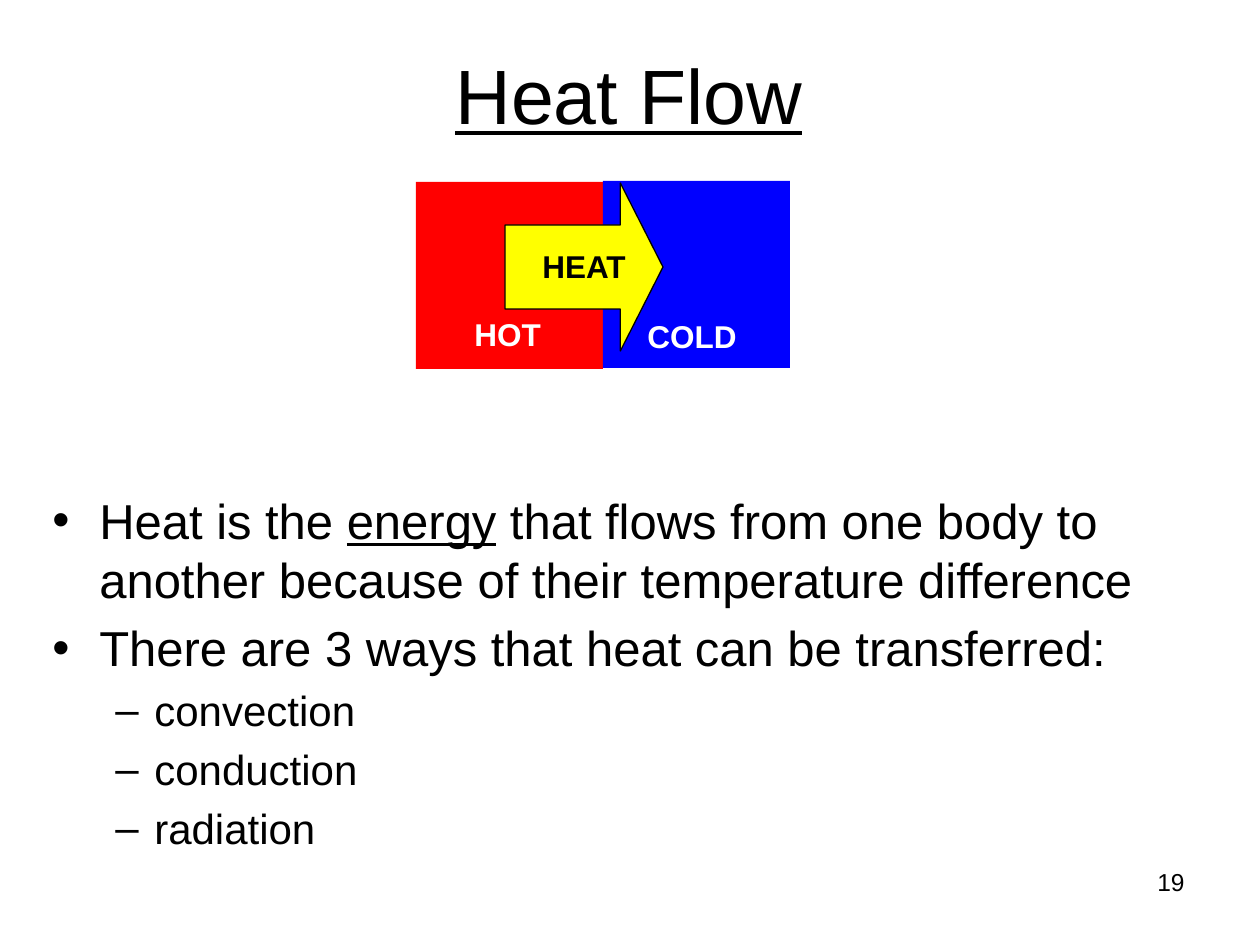
from dataclasses import dataclass

from lxml import etree
from pptx import Presentation
from pptx.dml.color import RGBColor
from pptx.enum.shapes import MSO_SHAPE
from pptx.enum.text import MSO_ANCHOR, PP_ALIGN
from pptx.oxml.ns import qn
from pptx.util import Pt

RECT, ARROW = MSO_SHAPE.RECTANGLE, MSO_SHAPE.RIGHT_ARROW
TOP, MIDDLE = MSO_ANCHOR.TOP, MSO_ANCHOR.MIDDLE
LEFT, CENTER, RIGHT = PP_ALIGN.LEFT, PP_ALIGN.CENTER, PP_ALIGN.RIGHT
COLORS = {"black": "000000", "white": "FFFFFF", "hot": "FF0000",
          "cold": "0000FF", "heat": "FFFF00"}
PX = 914400 / 126


@dataclass
class Box:
    x: int
    y: int
    w: int
    h: int


@dataclass
class Block:
    box: Box
    kind: int
    fill: str
    label: str
    label_box: Box
    text_color: str


@dataclass
class Label:
    box: Box
    text: str
    style: dict
    align: int = LEFT
    anchor: int = TOP
    wrap: bool = True


@dataclass
class Level:
    size: int
    margin: int
    hanging: int
    bullet: str


@dataclass
class Item:
    level: Level
    runs: list[tuple[str, bool]]


MAIN = Level(28, 47, 47, "•")
SUB = Level(24, 102, 39, "–")
ITEMS = [
    Item(MAIN, [("Heat is the ", False), ("energy", True),
                (" that flows from one body to another because of their "
                 "temperature difference", False)]),
    Item(MAIN, [("There are 3 ways that heat can be transferred:", False)]),
    *(Item(SUB, [(way, False)]) for way in ("convection", "conduction", "radiation")),
]
BLOCKS = [
    Block(Box(416, 182, 187, 187), RECT, "hot", "HOT", Box(462, 309, 92, 50), "white"),
    Block(Box(603, 181, 187, 187), RECT, "cold", "COLD", Box(635, 311, 115, 50), "white"),
    Block(Box(505, 183, 158, 168), ARROW, "heat", "HEAT", Box(530, 241, 111, 50), "black"),
]
TITLE = Label(Box(62, 15, 1134, 158), "Heat Flow",
              {"size": Pt(44), "underline": True}, CENTER, MIDDLE)
NUMBER = Label(Box(903, 861, 294, 66), "19", {"size": Pt(14)}, RIGHT)
BODY = Box(40, 484, 1134, 397)


def emu(px: int) -> int:
    return round(px * PX)


def place(box: Box) -> list[int]:
    return [emu(v) for v in (box.x, box.y, box.w, box.h)]


def rgb(name: str) -> RGBColor:
    return RGBColor.from_string(COLORS[name])


def add_run(p, text: str, style: dict, color: str = "black") -> None:
    r = p.add_run()
    r.text = text
    for key, value in {"name": "Arial", **style}.items():
        setattr(r.font, key, value)
    r.font.color.rgb = rgb(color)


def add_label(s, label: Label, color: str = "black") -> None:
    tf = s.shapes.add_textbox(*place(label.box)).text_frame
    tf.word_wrap, tf.vertical_anchor = label.wrap, label.anchor
    p = tf.paragraphs[0]
    p.alignment = label.align
    add_run(p, label.text, label.style, color)


def add_block(s, block: Block) -> None:
    sp = s.shapes.add_shape(block.kind, *place(block.box))
    sp.shadow.inherit = False
    sp.fill.solid()
    sp.fill.fore_color.rgb = rgb(block.fill)
    if block.kind == ARROW:
        sp.adjustments[0], sp.adjustments[1] = 0.5, 0.27
        sp.line.color.rgb = rgb("black")
        sp.line.width = Pt(0.75)
    else:
        sp.line.fill.background()
    style = {"size": Pt(18), "bold": True}
    add_label(s, Label(block.label_box, block.label, style, wrap=False), block.text_color)


def add_body(s, box: Box, items: list[Item]) -> None:
    tf = s.shapes.add_textbox(*place(box)).text_frame
    tf.word_wrap = True
    for i, item in enumerate(items):
        p = tf.add_paragraph() if i else tf.paragraphs[0]
        level = item.level
        p.level = int(level is SUB)
        if i:
            p.space_before = Pt(level.size * 0.2)
        pr = p._p.get_or_add_pPr()
        pr.set("marL", str(emu(level.margin)))
        pr.set("indent", str(-emu(level.hanging)))
        etree.SubElement(pr, qn("a:buFont"), typeface="Arial")
        etree.SubElement(pr, qn("a:buChar"), char=level.bullet)
        for text, underline in item.runs:
            add_run(p, text, {"size": Pt(level.size), "underline": underline})


def main() -> None:
    """Build the heat flow slide."""
    prs = Presentation()
    prs.slide_width, prs.slide_height = emu(1260), emu(945)
    s = prs.slides.add_slide(prs.slide_layouts[6])
    add_label(s, TITLE)
    add_body(s, BODY, ITEMS)
    for block in BLOCKS:
        add_block(s, block)
    add_label(s, NUMBER)
    prs.save("out.pptx")


if __name__ == "__main__":
    main()
